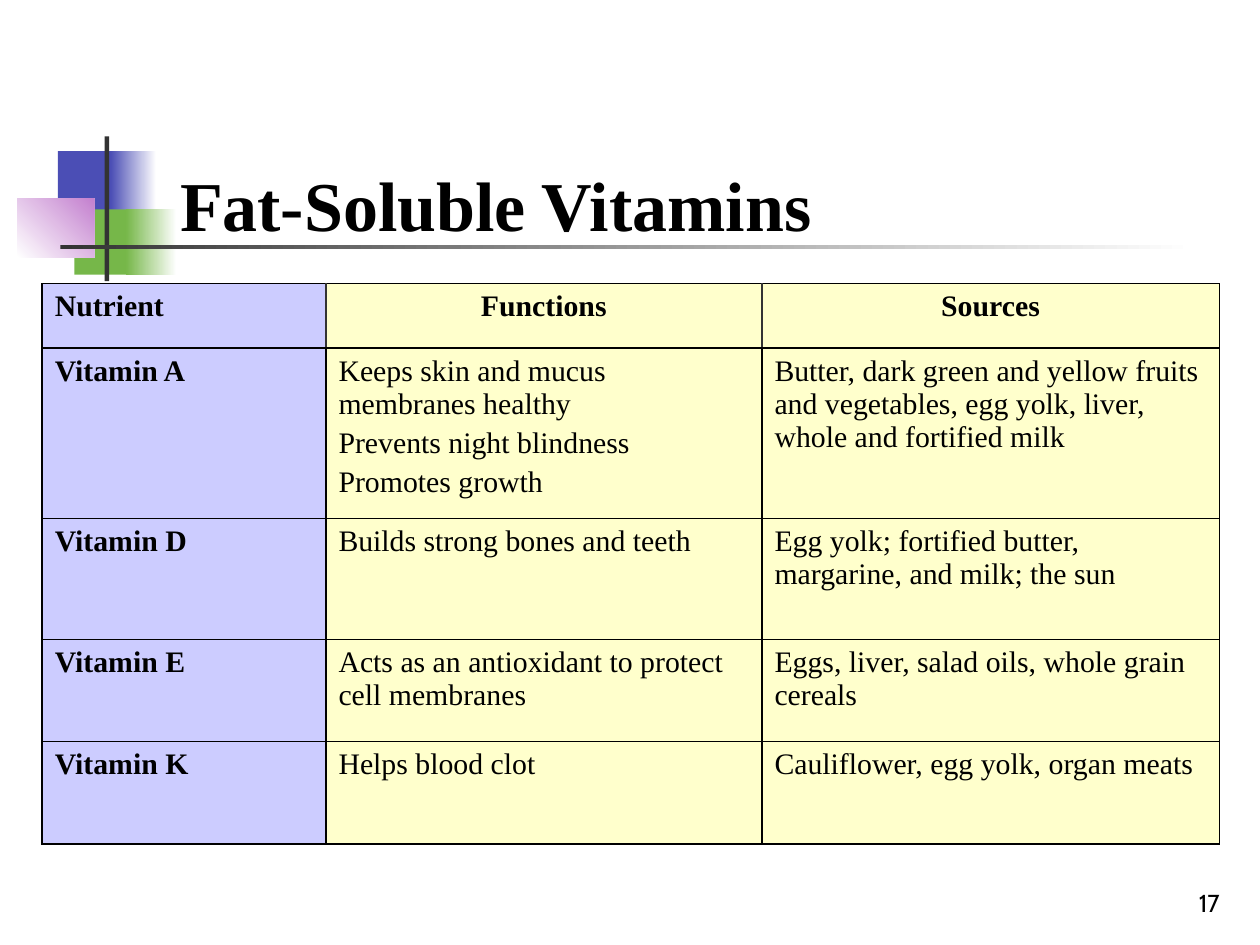
from lxml.etree import SubElement
from pptx import Presentation
from pptx.dml.color import RGBColor
from pptx.enum.shapes import MSO_SHAPE as Preset
from pptx.enum.text import MSO_ANCHOR as Anchor, PP_ALIGN as Align
from pptx.oxml.ns import qn
from pptx.util import Cm, Pt

BLACK = RGBColor(0x00, 0x00, 0x00)
CHARCOAL = RGBColor(0x33, 0x33, 0x33)
WHITE = RGBColor(0xFF, 0xFF, 0xFF)
BLUE = RGBColor(0x4B, 0x4E, 0xB5)
GREEN = RGBColor(0x76, 0xB7, 0x49)
ORCHID = RGBColor(0xC4, 0x81, 0xCF)
LAVENDER = RGBColor(0xCC, 0xCC, 0xFF)
CREAM = RGBColor(0xFF, 0xFF, 0xCC)

COLUMN_WIDTHS = (5.72, 8.79, 9.22)
ROW_HEIGHTS = (1.3, 3.43, 2.44, 2.06, 2.06)
VITAMINS = [
    ("Nutrient", "Functions", "Sources"),
    ("Vitamin A",
     "Keeps skin and mucus membranes healthy\nPrevents night blindness\nPromotes growth",
     "Butter, dark green and yellow fruits and vegetables, egg yolk, liver, "
     "whole and fortified milk"),
    ("Vitamin D", "Builds strong bones and teeth",
     "Egg yolk; fortified butter, margarine, and milk; the sun"),
    ("Vitamin E", "Acts as an antioxidant to protect cell membranes",
     "Eggs, liver, salad oils, whole grain cereals"),
    ("Vitamin K", "Helps blood clot", "Cauliflower, egg yolk, organ meats"),
]


def write(frame, text, size=17, font="Times New Roman", bold=False,
          align=Align.LEFT, space_before=0):
    """Fill a text frame, one paragraph per line of text."""
    frame.text = text
    for paragraph in frame.paragraphs:
        paragraph.alignment = align
        paragraph.space_before = Pt(space_before)
        style = paragraph.font
        style.name, style.size, style.bold = font, Pt(size), bold
        style.color.rgb = BLACK


def draw_border(cell, side, color):
    """Draw a 1 pt line on one side (L, R, T or B) of a table cell."""
    line = SubElement(cell._tc.get_or_add_tcPr(), qn(f"a:ln{side}"), w=str(Pt(1)))
    SubElement(SubElement(line, qn("a:solidFill")), qn("a:srgbClr"), val=str(color))


class SlideBuilder:
    def __init__(self, slide):
        self.shapes = slide.shapes

    def block(self, left, top, width, height, color, end_color=None, angle=0):
        """Add a borderless rectangle, fading to end_color if one is given."""
        shape = self.shapes.add_shape(
            Preset.RECTANGLE, Cm(left), Cm(top), Cm(width), Cm(height))
        shape.shadow.inherit = False
        shape.line.fill.background()
        if end_color is None:
            shape.fill.solid()
            shape.fill.fore_color.rgb = color
        else:
            shape.fill.gradient()
            shape.fill.gradient_angle = angle
            for stop, shade in zip(shape.fill.gradient_stops, (color, end_color)):
                stop.color.rgb = shade

    def text(self, left, top, width, height, text, **style):
        frame = self.shapes.add_textbox(
            Cm(left), Cm(top), Cm(width), Cm(height)).text_frame
        frame.word_wrap = True
        frame.vertical_anchor = Anchor.BOTTOM
        write(frame, text, **style)

    def table(self, left, top, rows, widths, heights):
        table = self.shapes.add_table(
            len(rows), len(widths), Cm(left), Cm(top),
            Cm(sum(widths)), Cm(sum(heights))).table
        table.first_row = table.horz_banding = False
        for column, width in zip(table.columns, widths):
            column.width = Cm(width)
        for row, height in zip(table.rows, heights):
            row.height = Cm(height)
        last = len(widths) - 1
        for r, row in enumerate(rows):
            for c, text in enumerate(row):
                cell = table.cell(r, c)
                is_header, is_name = r == 0, c == 0
                write(cell.text_frame, text, bold=is_header or is_name,
                      align=Align.CENTER if is_header and not is_name else Align.LEFT,
                      space_before=3.4)
                inner = CHARCOAL if is_header else BLACK
                draw_border(cell, "L", BLACK if is_name else inner)
                draw_border(cell, "R", BLACK if c == last else inner)
                draw_border(cell, "T", BLACK)
                draw_border(cell, "B", BLACK)
                cell.fill.solid()
                cell.fill.fore_color.rgb = LAVENDER if is_name else CREAM


def main():
    deck = Presentation()
    deck.slide_width, deck.slide_height = Cm(25.4), Cm(19.05)
    builder = SlideBuilder(deck.slides.add_slide(deck.slide_layouts[6]))

    builder.block(1.17, 3.05, 1.22, 1.32, BLUE)
    builder.block(2.23, 3.05, 0.92, 1.32, BLUE, WHITE)
    builder.block(1.5, 4.22, 1.17, 1.32, GREEN)
    builder.block(2.54, 4.22, 1.02, 1.32, GREEN, WHITE)
    builder.block(0.35, 4.01, 1.55, 1.18, WHITE, ORCHID, angle=45)
    builder.block(2.11, 2.75, 0.09, 2.92, CHARCOAL)
    builder.block(1.22, 4.94, 22.86, 0.09, CHARCOAL, WHITE)

    builder.text(19.56, 17.35, 5.28, 1.27, "17",
                 size=14, font="Cabin", align=Align.RIGHT)
    builder.table(0.85, 5.72, VITAMINS, COLUMN_WIDTHS, ROW_HEIGHTS)
    builder.text(3.38, 1.9, 24.97, 3.18, "Fat-Soluble Vitamins", size=40, bold=True)
    deck.save("out.pptx")


if __name__ == "__main__":
    main()
